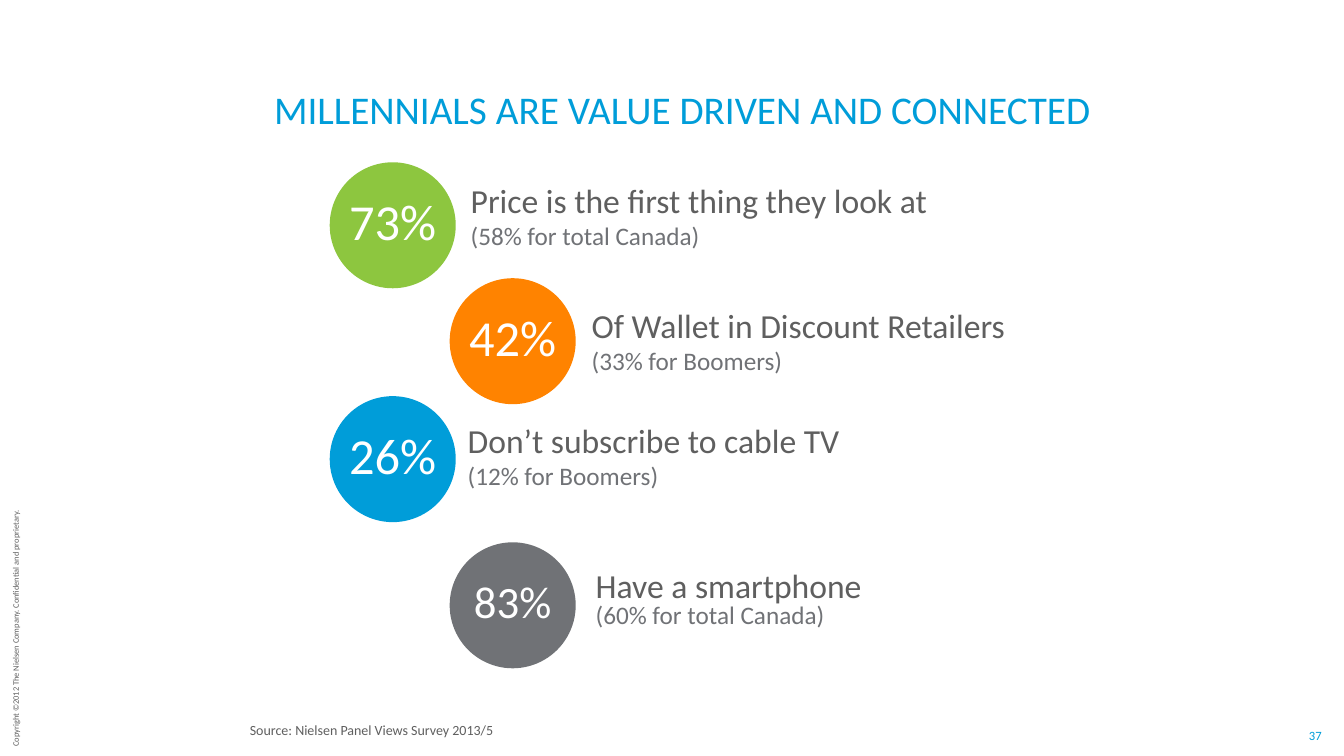
from pptx import Presentation
from pptx.dml.color import RGBColor
from pptx.enum.shapes import MSO_SHAPE
from pptx.enum.text import MSO_ANCHOR, PP_ALIGN
from pptx.util import Inches, Pt

BLUE = RGBColor(0x00, 0x9D, 0xD9)
GREEN = RGBColor(0x8D, 0xC6, 0x3F)
ORANGE = RGBColor(0xFF, 0x83, 0x00)
GRAY = RGBColor(0x70, 0x72, 0x76)
DARK_GRAY = RGBColor(0x5F, 0x5F, 0x5F)
WHITE = RGBColor(0xFF, 0xFF, 0xFF)

FONT = "Calibri"
CIRCLE_SIZE = 1.25
LEFT_X, RIGHT_X = 3.27, 4.46

# circle x, y, colour, figure, figure size,
# label x, y, width, height, headline, comparison, line spacing
FACTS = [
    (LEFT_X, 1.61, GREEN, "73%", 36, 4.57, 1.74, 5.93, 0.81,
     "Price is the first thing they look at", "(58% for total Canada)", None),
    (RIGHT_X, 2.76, ORANGE, "42%", 36, 5.77, 2.98, 4.36, 0.81,
     "Of Wallet in Discount Retailers", "(33% for Boomers)", None),
    (LEFT_X, 3.93, BLUE, "26%", 36, 4.54, 4.12, 3.92, 0.81,
     "Don’t subscribe to cable TV", "(12% for Boomers)", None),
    (RIGHT_X, 5.38, GRAY, "83%", 32, 5.81, 5.63, 5.37, 0.67,
     "Have a smartphone", "(60% for total Canada)", 0.8),
]


def add_run(p, text, size, color):
    r = p.add_run()
    r.text = text
    r.font.name = FONT
    r.font.size = Pt(size)
    r.font.color.rgb = color


def add_text(slide, x, y, w, h, lines, anchor=MSO_ANCHOR.TOP, margin_y=0.05,
             wrap=True, line_spacing=None):
    """Add a text box with one paragraph per (text, size, colour) line."""
    box = slide.shapes.add_textbox(Inches(x), Inches(y), Inches(w), Inches(h))
    tf = box.text_frame
    tf.word_wrap = wrap
    tf.vertical_anchor = anchor
    tf.margin_top = tf.margin_bottom = Inches(margin_y)
    for i, line in enumerate(lines):
        p = tf.add_paragraph() if i else tf.paragraphs[0]
        p.line_spacing = line_spacing
        add_run(p, *line)
    return box


def add_circle(slide, x, y, color, figure, size):
    sp = slide.shapes.add_shape(MSO_SHAPE.OVAL, Inches(x), Inches(y),
                                Inches(CIRCLE_SIZE), Inches(CIRCLE_SIZE))
    sp.shadow.inherit = False
    sp.fill.solid()
    sp.fill.fore_color.rgb = color
    sp.line.fill.background()
    tf = sp.text_frame
    tf.word_wrap = False
    tf.vertical_anchor = MSO_ANCHOR.MIDDLE
    tf.margin_left = tf.margin_right = tf.margin_top = tf.margin_bottom = 0
    p = tf.paragraphs[0]
    p.alignment = PP_ALIGN.CENTER
    p.line_spacing = 0.85
    add_run(p, figure, size, WHITE)


def add_fact(slide, x, y, color, figure, size, label_x, label_y, label_w,
             label_h, headline, comparison, line_spacing):
    add_circle(slide, x, y, color, figure, size)
    add_text(slide, label_x, label_y, label_w, label_h,
             [(headline, 24, DARK_GRAY), (comparison, 18, GRAY)],
             line_spacing=line_spacing)


def add_page_number(slide, number):
    box = add_text(slide, 12.97, 7.22, 0.15, 0.15, [(number, 9, BLUE)],
                   MSO_ANCHOR.MIDDLE, margin_y=0, wrap=False)
    tf = box.text_frame
    tf.margin_left = tf.margin_right = 0
    tf.paragraphs[0].alignment = PP_ALIGN.CENTER


def main():
    prs = Presentation()
    prs.slide_width = Inches(13.33)
    prs.slide_height = Inches(7.5)
    slide = prs.slides.add_slide(prs.slide_layouts[6])

    copyright_line = add_text(
        slide, -1.14, 6.11, 2.59, 0.2,
        [("Copyright ©2012 The Nielsen Company. Confidential and proprietary.",
          6, DARK_GRAY)], wrap=False)
    copyright_line.rotation = 270
    add_page_number(slide, "37")

    add_text(slide, 2.62, 0.69, 8.93, 0.62,
             [("MILLENNIALS ARE VALUE DRIVEN AND CONNECTED", 28, BLUE)],
             MSO_ANCHOR.BOTTOM, margin_y=0)
    for fact in FACTS:
        add_fact(slide, *fact)
    add_text(slide, 2.38, 6.93, 8.93, 0.4,
             [("Source: Nielsen Panel Views Survey 2013/5", 10, DARK_GRAY)],
             MSO_ANCHOR.BOTTOM, margin_y=0)

    prs.save("out.pptx")


if __name__ == "__main__":
    main()
